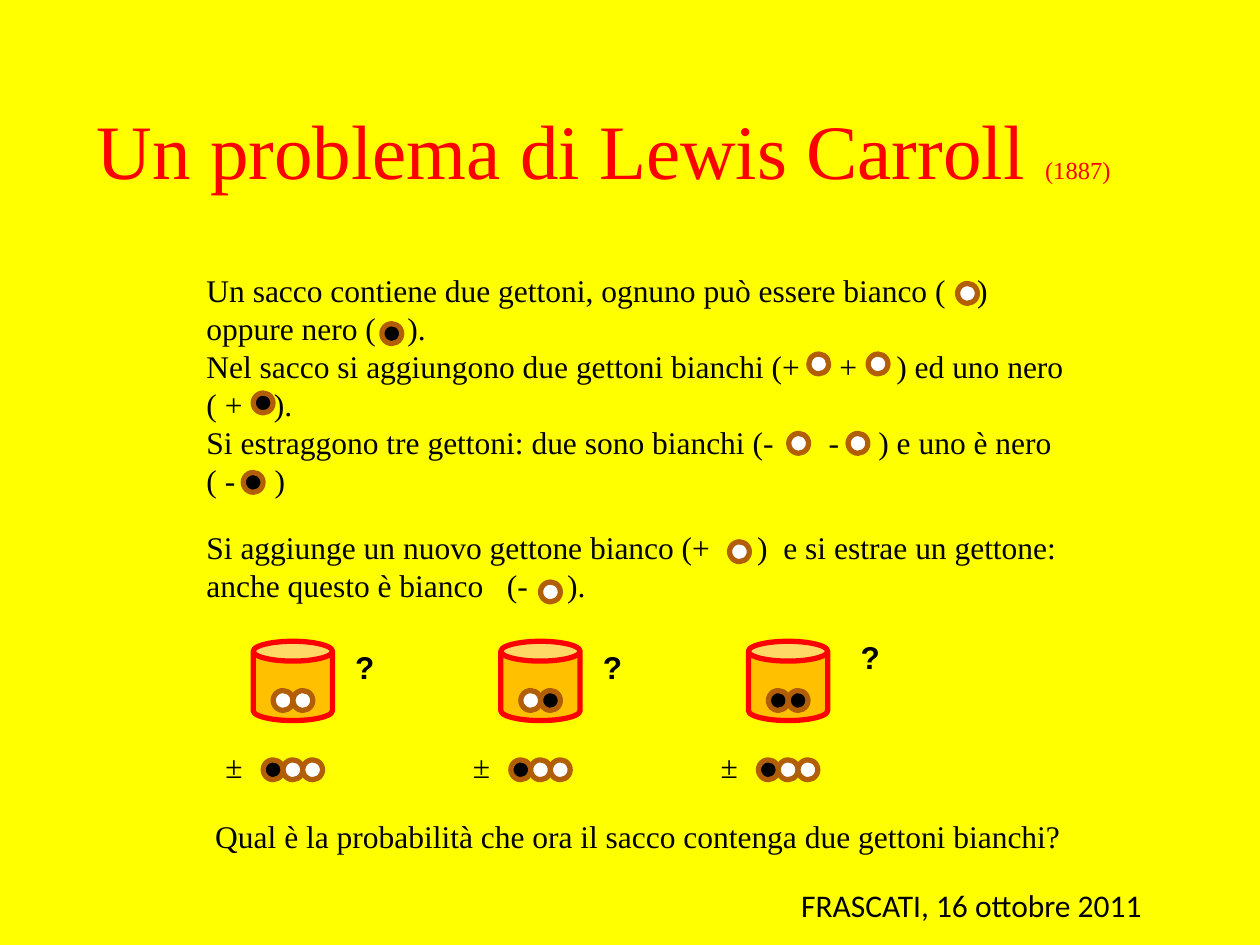
from pptx import Presentation
from pptx.dml.color import RGBColor
from pptx.enum.shapes import MSO_SHAPE as Shape
from pptx.enum.text import MSO_ANCHOR as Anchor, MSO_AUTO_SIZE as AutoSize, PP_ALIGN as Align
from pptx.util import Pt

YELLOW = RGBColor(0xFF, 0xFF, 0x00)
RED = RGBColor(0xFF, 0x00, 0x00)
ORANGE = RGBColor(0xFF, 0xC0, 0x00)
BROWN = RGBColor(0xB2, 0x5E, 0x07)
WHITE = RGBColor(0xFF, 0xFF, 0xFF)
BLACK = RGBColor(0x00, 0x00, 0x00)

SERIF = "Times New Roman"
TOKEN = 11.3  # diameter, also the step between neighbouring tokens
SACK_LEFT, SACK_TOP, SACK_SIZE, SACK_STEP = 144.7, 366.5, 45.3, 141.5

PROBLEM = [
    "Un sacco contiene due gettoni, ognuno può essere bianco (    ) oppure nero (    ).",
    "Nel sacco si aggiungono due gettoni bianchi (+     +     ) ed uno nero ( +    ).",
    "Si estraggono tre gettoni: due sono bianchi (-       -     ) e uno è nero  ( -     )",
]
NEW_TOKEN = ("Si aggiunge un nuovo gettone bianco (+      )  e si estrae un gettone: "
             "anche questo è bianco   (-     ).")
QUESTION = "Qual è la probabilità che ora il sacco contenga due gettoni bianchi?"

# Tokens that sit inside the sentences: left, top, colour
INLINE_TOKENS = [
    (547.2, 162, WHITE), (218.2, 185, BLACK),
    (462.2, 202.3, WHITE), (496.1, 202.3, WHITE), (144.7, 224.6, BLACK),
    (450.7, 247.7, WHITE), (484.6, 247.7, WHITE), (139, 270, BLACK),
    (416.9, 309.6, WHITE), (308.9, 332.6, WHITE),
]

# Possible sacks: two token colours, then offset of the question mark
SACKS = [
    ((WHITE, WHITE), 51.2, 0),
    ((WHITE, BLACK), 51.2, 0),
    ((BLACK, BLACK), 57, -5.8),
]


def add_run(paragraph, text, size, color, font=SERIF, bold=False):
    run = paragraph.add_run()
    run.text = text
    run.font.name = font
    run.font.size = Pt(size)
    run.font.bold = bold
    run.font.color.rgb = color


def add_title(slide):
    title = slide.shapes.title
    title.left, title.top, title.width, title.height = Pt(48.2), Pt(54.7), Pt(599), Pt(60.5)
    frame = title.text_frame
    frame.word_wrap = False
    frame.auto_size = AutoSize.NONE
    frame.vertical_anchor = Anchor.TOP
    paragraph = frame.paragraphs[0]
    paragraph.alignment = Align.LEFT
    paragraph.line_spacing = Pt(53.2)
    add_run(paragraph, "Un problema di Lewis Carroll ", 44, RED)
    add_run(paragraph, "(1887)", 14, RED)


def add_text(slide, left, top, width, height, lines, wrap=True, font=SERIF, bold=False):
    box = slide.shapes.add_textbox(Pt(left), Pt(top), Pt(width), Pt(height))
    frame = box.text_frame
    frame.word_wrap = wrap
    for index, line in enumerate(lines):
        paragraph = frame.add_paragraph() if index else frame.paragraphs[0]
        paragraph.line_spacing = Pt(21.7)
        add_run(paragraph, line, 18, BLACK, font, bold)


def add_outlined(slide, kind, left, top, size, fill, line):
    shape = slide.shapes.add_shape(kind, Pt(left), Pt(top), Pt(size), Pt(size))
    shape.shadow.inherit = False
    shape.fill.solid()
    shape.fill.fore_color.rgb = fill
    shape.line.color.rgb = line
    shape.line.width = Pt(3)


def add_token(slide, left, top, color):
    add_outlined(slide, Shape.OVAL, left, top, TOKEN, color, BROWN)


def add_sack(slide, left, contents, mark_x, mark_y):
    add_outlined(slide, Shape.CAN, left, SACK_TOP, SACK_SIZE, ORANGE, RED)
    for index, color in enumerate(contents):
        add_token(slide, left + 11.4 + index * TOKEN, 394.6, color)
    add_text(slide, left + mark_x, SACK_TOP + mark_y, 17.3, 28.8, ["?"], font="Arial", bold=True)
    # Tokens added and removed, the black one in front
    for index, color in ((1, WHITE), (2, WHITE), (0, BLACK)):
        add_token(slide, left + 5.7 + index * TOKEN, 434.2, color)
    add_text(slide, left - 23, 423.4, 24.5, 28.8, ["±"], wrap=False)


def main():
    presentation = Presentation()
    presentation.slide_width, presentation.slide_height = Pt(720), Pt(540)
    slide = presentation.slides.add_slide(presentation.slide_layouts[5])
    slide.background.fill.solid()
    slide.background.fill.fore_color.rgb = YELLOW

    # Statement of the problem
    add_title(slide)
    add_text(slide, 110.9, 151.2, 510.5, 138.2, PROBLEM)
    add_text(slide, 110.9, 298.1, 516.2, 51.1, [NEW_TOKEN])
    for left, top, color in INLINE_TOKENS:
        add_token(slide, left, top, color)

    # The three possible sacks
    for index, (contents, mark_x, mark_y) in enumerate(SACKS):
        add_sack(slide, SACK_LEFT + index * SACK_STEP, contents, mark_x, mark_y)

    # Question and place
    add_text(slide, 115.9, 463, 510.5, 28.8, [QUESTION])
    add_text(slide, 450.7, 502.6, 221, 28.8, ["FRASCATI, 16 ottobre 2011"], font="Calibri")

    presentation.save("out.pptx")


if __name__ == "__main__":
    main()
